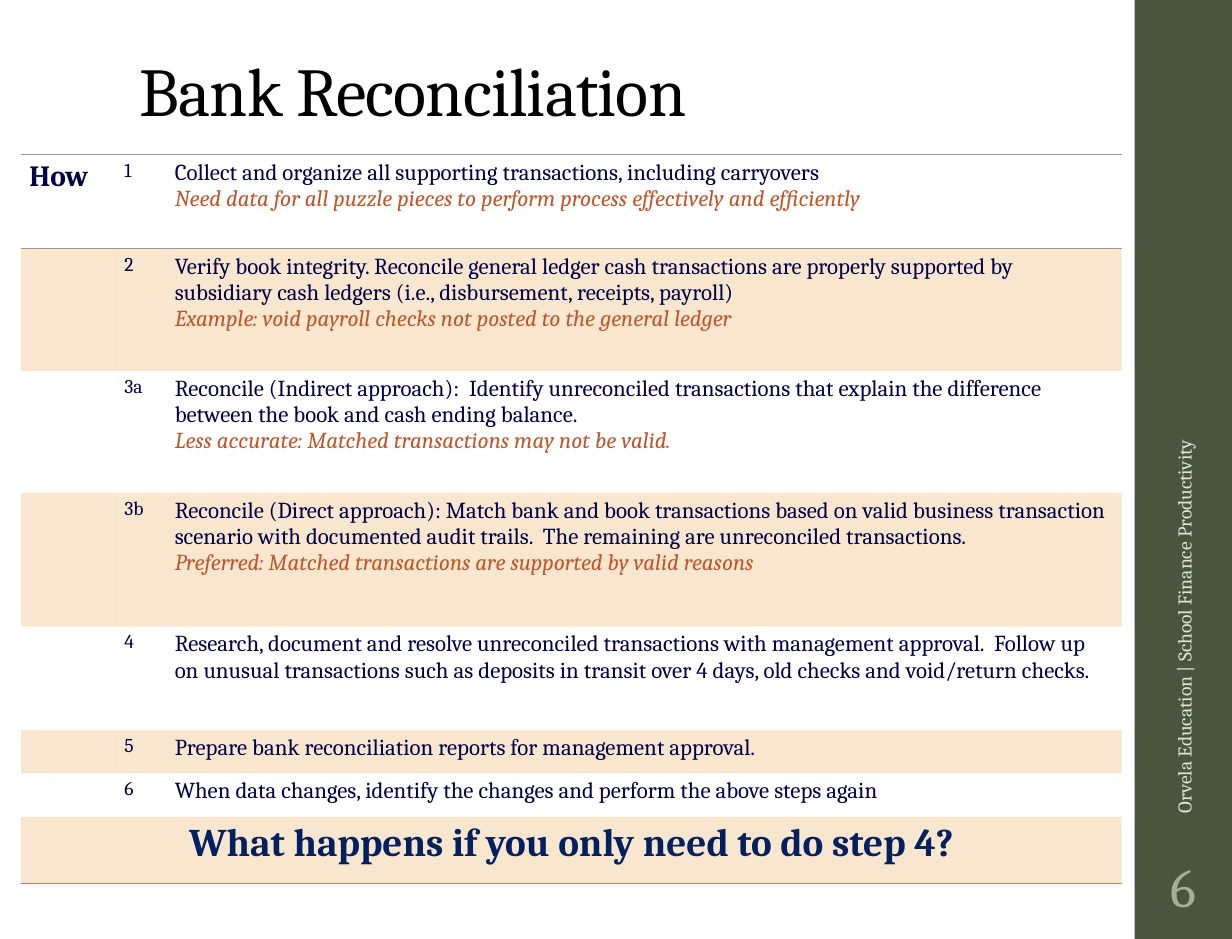
from dataclasses import dataclass

import pptx
import pptx.dml.color
import pptx.enum.shapes
import pptx.enum.text
import pptx.oxml
import pptx.oxml.ns
import pptx.util

EMU_PER_PX = 9144  # 100 px to the inch
FONT = "Cambria"
NO_STYLE = "{2D5ABB26-0587-4C30-8999-92F81FD0307C}"
COLORS = {
    "title": "000000",
    "sidebar": "4A543E",
    "number": "A2AF92",
    "footer": "E0E4DB",
    "body": "000048",
    "note": "BD582C",
    "question": "002060",
    "accent": "E48312",
    "rule": "999999",
}
COLUMNS = [81, 43, 814]
QUESTION = "What happens if you only need to do step 4?"
QUESTION_HEIGHT = 57
ALIGN = pptx.enum.text.PP_ALIGN
ANCHOR = pptx.enum.text.MSO_ANCHOR


@dataclass
class Step:
    number: str
    height: int
    text: str
    note: str = ""


STEPS = [
    Step("1", 80, "Collect and organize all supporting transactions, including carryovers",
         "Need data for all puzzle pieces to perform process effectively and efficiently"),
    Step("2", 104, "Verify book integrity. Reconcile general ledger cash transactions are properly "
         "supported by subsidiary cash ledgers (i.e., disbursement, receipts, payroll)",
         "Example: void payroll checks not posted to the general ledger"),
    Step("3a", 104, "Reconcile (Indirect approach):  Identify unreconciled transactions that explain "
         "the difference between the book and cash ending balance.",
         "Less accurate: Matched transactions may not be valid."),
    Step("3b", 114, "Reconcile (Direct approach): Match bank and book transactions based on valid "
         "business transaction scenario with documented audit trails.  "
         "The remaining are unreconciled transactions.",
         "Preferred: Matched transactions are supported by valid reasons"),
    Step("4", 88, "Research, document and resolve unreconciled transactions with management "
         "approval.  Follow up on unusual transactions such as deposits in transit over 4 days, "
         "old checks and void/return checks."),
    Step("5", 37, "Prepare bank reconciliation reports for management approval."),
    Step("6", 37, "When data changes, identify the changes and perform the above steps again"),
]


def px(n: int) -> pptx.util.Emu:
    return pptx.util.Emu(n * EMU_PER_PX)


def rgb(name: str) -> pptx.dml.color.RGBColor:
    return pptx.dml.color.RGBColor.from_string(COLORS[name])


def write(p, text: str, size: float, color: str, bold: bool = False,
          italic: bool = False, align=ALIGN.LEFT) -> None:
    p.text = text
    p.alignment = align
    p.font.name = FONT
    p.font.size = pptx.util.Pt(size)
    p.font.color.rgb = rgb(color)
    p.font.bold = bold
    p.font.italic = italic


def add_label(slide, box: tuple, text: str, size: float, color: str,
              align=ALIGN.LEFT, rotation: int = 0) -> None:
    sp = slide.shapes.add_textbox(*map(px, box))
    sp.rotation = rotation
    tf = sp.text_frame
    tf.word_wrap = True
    tf.vertical_anchor = ANCHOR.MIDDLE
    write(tf.paragraphs[0], text, size, color, align=align)


def tint(cell) -> None:
    """Fill a cell with the accent at 20% opacity."""
    cell.fill.solid()
    cell.fill.fore_color.rgb = rgb("accent")
    clr = cell._tc.tcPr.find(".//" + pptx.oxml.ns.qn("a:srgbClr"))
    clr.append(pptx.oxml.parse_xml(f'<a:alpha {pptx.oxml.ns.nsdecls("a")} val="20000"/>'))


def add_borders(cell, sides: str, color: str, width: float) -> None:
    """Draw the given sides, such as "TB", in that order before the fill."""
    for i, side in enumerate(sides):
        line = pptx.oxml.parse_xml(
            f'<a:ln{side} {pptx.oxml.ns.nsdecls("a")} w="{pptx.util.Pt(width)}">'
            f'<a:solidFill><a:srgbClr val="{COLORS[color]}"/></a:solidFill></a:ln{side}>')
        cell._tc.get_or_add_tcPr().insert(i, line)


def add_title(slide) -> None:
    sp = slide.shapes.title
    sp.left, sp.top, sp.width, sp.height = map(px, (109, 43, 835, 74))
    tf = sp.text_frame
    tf.auto_size = pptx.enum.text.MSO_AUTO_SIZE.NONE
    tf.vertical_anchor = ANCHOR.BOTTOM
    p = tf.paragraphs[0]
    write(p, "Bank Reconciliation", 42, "title")
    p.line_spacing = 0.9
    p.runs[0].font._element.set("spc", "-50")


def add_sidebar(slide) -> None:
    sp = slide.shapes.add_shape(pptx.enum.shapes.MSO_SHAPE.RECTANGLE,
                                *map(px, (967, 0, 83, 800)))
    sp.shadow.inherit = False
    sp.fill.solid()
    sp.fill.fore_color.rgb = rgb("sidebar")
    sp.line.fill.background()
    add_label(slide, (969, 720, 79, 69), "6", 33.6, "number", ALIGN.CENTER)
    add_label(slide, (800, 478, 418, 31), "Orvela Education | School Finance Productivity",
              12, "footer", rotation=270)


def add_steps(slide) -> None:
    heights = [step.height for step in STEPS] + [QUESTION_HEIGHT]
    frame = slide.shapes.add_table(len(heights), len(COLUMNS), px(18), px(132),
                                   px(sum(COLUMNS)), px(sum(heights)))
    table = frame.table
    table.first_row = table.horz_banding = False
    table._tbl.tblPr.find(pptx.oxml.ns.qn("a:tableStyleId")).text = NO_STYLE
    for column, width in zip(table.columns, COLUMNS):
        column.width = px(width)
    for i, (row, height) in enumerate(zip(table.rows, heights)):
        row.height = px(height)
        for cell in row.cells:
            cell.margin_left = cell.margin_right = px(7)
            cell.margin_top = cell.margin_bottom = px(4)
            cell.text_frame.paragraphs[0].font.size = pptx.util.Pt(14)
            if i % 2:
                tint(cell)
            else:
                cell.fill.background()

    for i, step in enumerate(STEPS):
        write(table.cell(i, 1).text_frame.paragraphs[0], step.number, 12, "body")
        tf = table.cell(i, 2).text_frame
        write(tf.paragraphs[0], step.text, 14, "body")
        if step.note:
            write(tf.add_paragraph(), step.note, 14, "note", italic=True)
    write(table.cell(0, 0).text_frame.paragraphs[0], "How", 18, "body", bold=True)

    last = len(STEPS)
    for c in range(len(COLUMNS)):
        add_borders(table.cell(0, c), "TB", "rule", 0.75)
        add_borders(table.cell(last, c), "B", "accent", 1)
    question = table.cell(last, 0)
    question.merge(table.cell(last, len(COLUMNS) - 1))
    write(question.text_frame.paragraphs[0], QUESTION, 24, "question",
          bold=True, align=ALIGN.CENTER)


def main() -> None:
    prs = pptx.Presentation()
    prs.slide_width, prs.slide_height = px(1050), px(800)
    slide = prs.slides.add_slide(prs.slide_layouts[5])
    add_sidebar(slide)
    add_title(slide)
    add_steps(slide)
    prs.save("out.pptx")


if __name__ == "__main__":
    main()
